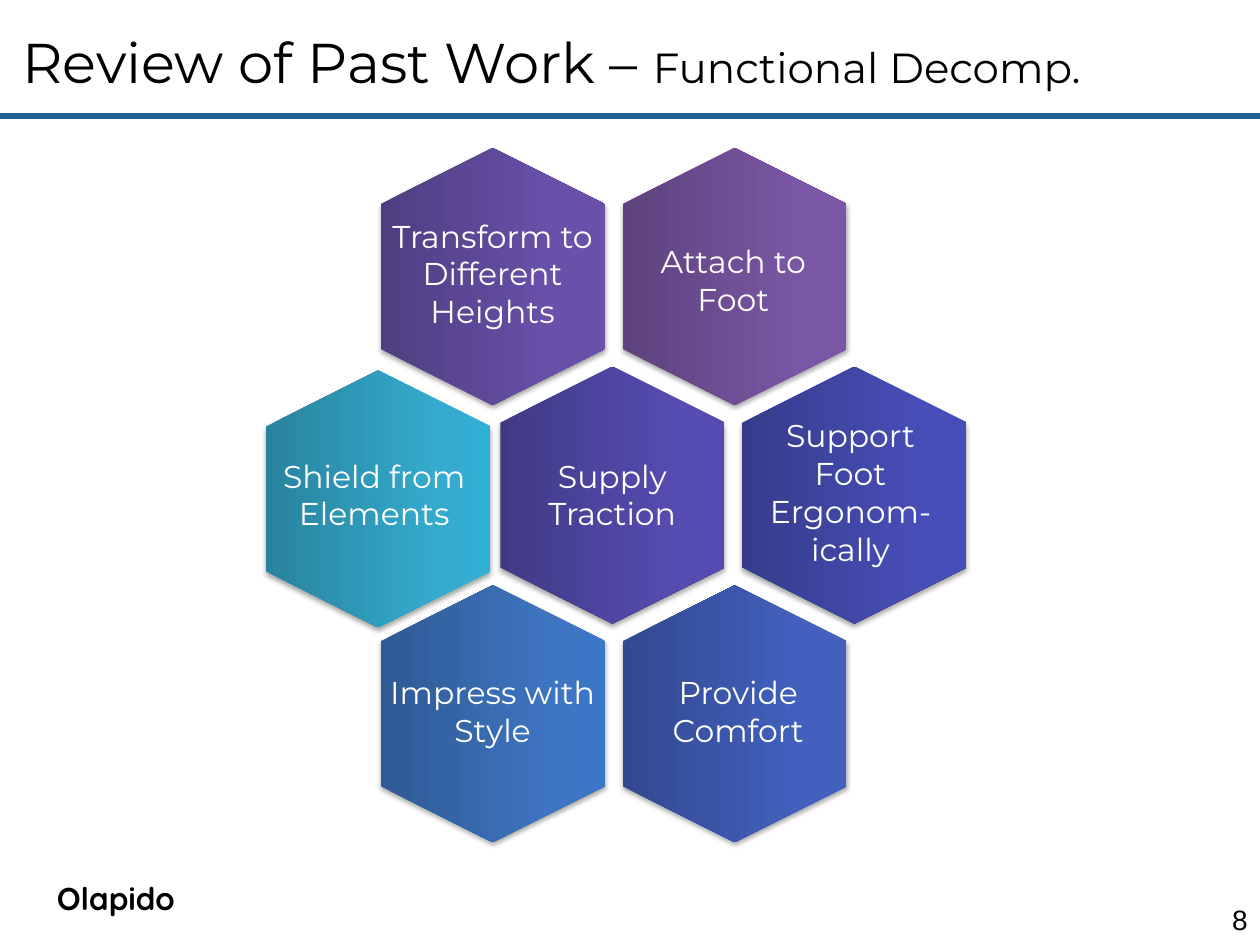
import pptx
import pptx.util
import pptx.dml.color
import pptx.enum.shapes
import pptx.enum.text
import pptx.oxml
import pptx.oxml.ns

WIDTH, HEIGHT = 10, 7.5
COLORS = {"text": "000000", "label": "FFFFFF", "rule": "236192", "shadow": "000000"}
ALIGN = pptx.enum.text.PP_ALIGN
HEXAGON_LENGTH, HEXAGON_BREADTH = 2.04, 1.78
HALF_COLUMN, ROW = 0.96, 1.735

# columns: text, half columns and rows from centre, hexagon nudge, label offset, label size, gradient
FUNCTIONS = [
    ("Transform to Different Heights", (-1, -1), (0, 0), (0, -0.02), (1.83, 1.01), ("4F3E81", "6951AA", "6851AC")),
    ("Attach to Foot", (1, -1), (0, 0), (-0.01, 0.03), (1.83, 0.71), ("5D427D", "7A57A5", "7A56A7")),
    ("Shield from Elements", (-2, 0), (0.05, 0.03), (-0.03, -0.03), (1.83, 0.71), ("28839E", "35ACCF", "31AFD4")),
    ("Supply Traction", (0, 0), (-0.01, 0), (0, 0), (1.83, 0.71), ("403A86", "554DB1", "544BB4")),
    ("Support Foot Ergonom-ically", (2, 0), (-0.01, 0), (-0.03, -0.02), (1.77, 1.31), ("363C8B", "484EB7", "454DBB")),
    ("Impress with Style", (-1, 1), (0, 0), (0, -0.02), (1.83, 0.71), ("2F5A94", "3E76C3", "3B77C7")),
    ("Provide Comfort", (1, 1), (0, 0), (0.03, -0.02), (1.83, 0.71), ("324990", "4260BE", "4060C0")),
]


def inches(*lengths):
    return [pptx.util.Inches(length) for length in lengths]


def rgb(name):
    return pptx.dml.color.RGBColor.from_string(COLORS[name])


def add_text(slide, box, text, size, font="Montserrat", color="text", align=ALIGN.LEFT):
    frame = slide.shapes.add_textbox(*inches(*box)).text_frame
    frame.word_wrap = True
    paragraph = frame.paragraphs[0]
    paragraph.add_run().text = text
    paragraph.alignment = align
    paragraph.font.size = pptx.util.Pt(size)
    paragraph.font.name = font
    paragraph.font.color.rgb = rgb(color)
    return frame


def add_header(slide, box):
    left, top, width, height = box
    connector = slide.shapes.add_connector(
        pptx.enum.shapes.MSO_CONNECTOR.STRAIGHT, *inches(left, top + height, left + width, top + height))
    connector.line.color.rgb = rgb("rule")
    connector.line.width = pptx.util.Pt(3.5)
    connector._element.spPr.append(pptx.oxml.parse_xml(f"<a:effectLst {pptx.oxml.ns.nsdecls('a')}/>"))
    title = add_text(slide, (left + 0.08, top + 0.17, width - 0.08, 0.64), "Review of Past Work – ", 32)
    subtitle = title.paragraphs[0].add_run()
    subtitle.text = "Functional Decomp."
    subtitle.font.size = pptx.util.Pt(24)


def add_hexagon(slide, center_x, center_y, gradient):
    hexagon = slide.shapes.add_shape(
        pptx.enum.shapes.MSO_SHAPE.HEXAGON,
        *inches(center_x - HEXAGON_LENGTH / 2, center_y - HEXAGON_BREADTH / 2, HEXAGON_LENGTH, HEXAGON_BREADTH))
    hexagon.rotation = 90
    hexagon.adjustments[0] = 0.25
    hexagon.line.fill.background()
    namespace = pptx.oxml.ns.nsdecls("a")
    stops = "".join(
        f'<a:gs pos="{position * 1000}"><a:srgbClr val="{color}"/></a:gs>'
        for position, color in zip((0, 80, 100), gradient))
    properties = hexagon._element.spPr
    properties.find(pptx.oxml.ns.qn("a:ln")).addprevious(pptx.oxml.parse_xml(
        f'<a:gradFill {namespace} rotWithShape="1"><a:gsLst>{stops}</a:gsLst>'
        '<a:lin ang="16200000" scaled="0"/></a:gradFill>'))
    properties.append(pptx.oxml.parse_xml(
        f'<a:effectLst {namespace}><a:outerShdw blurRad="{pptx.util.Pt(3.1)}" dist="{pptx.util.Pt(1.8)}" '
        f'dir="5400000" rotWithShape="0"><a:srgbClr val="{COLORS["shadow"]}"><a:alpha val="35000"/>'
        '</a:srgbClr></a:outerShdw></a:effectLst>'))


def add_honeycomb(slide, box):
    left, top, width, height = box
    labels = []
    for text, (column, row), nudge, offset, size, gradient in FUNCTIONS:
        center_x = left + width / 2 + column * HALF_COLUMN + nudge[0]
        center_y = top + height / 2 + row * ROW + nudge[1]
        add_hexagon(slide, center_x, center_y, gradient)
        labels.append((text, (center_x + offset[0] - size[0] / 2, center_y + offset[1] - size[1] / 2, *size)))
    for text, label_box in labels:
        add_text(slide, label_box, text, 18, color="label", align=ALIGN.CENTER)


def add_footer(slide, box):
    left, top, width, height = box
    name = add_text(slide, (left + 0.17, top, 1.5, 0.56), "Olapido", 18, "Quicksand", align=ALIGN.CENTER)
    name.paragraphs[0].line_spacing = 1.5
    name.paragraphs[0].font.bold = True
    number = add_text(slide, (left + width - 0.5, top + height - 0.4, 0.5, 0.4), "8", 16, "Arial", align=ALIGN.RIGHT)
    number.vertical_anchor = pptx.enum.text.MSO_ANCHOR.MIDDLE


def main():
    presentation = pptx.Presentation()
    presentation.slide_width, presentation.slide_height = inches(WIDTH, HEIGHT)
    slide = presentation.slides.add_slide(presentation.slide_layouts[6])
    add_header(slide, (0, 0, WIDTH, 0.92))
    add_honeycomb(slide, (2.06, 1.17, 5.62, 5.52))
    add_footer(slide, (0, 6.78, WIDTH, HEIGHT - 6.78))
    presentation.save("out.pptx")


if __name__ == "__main__":
    main()
